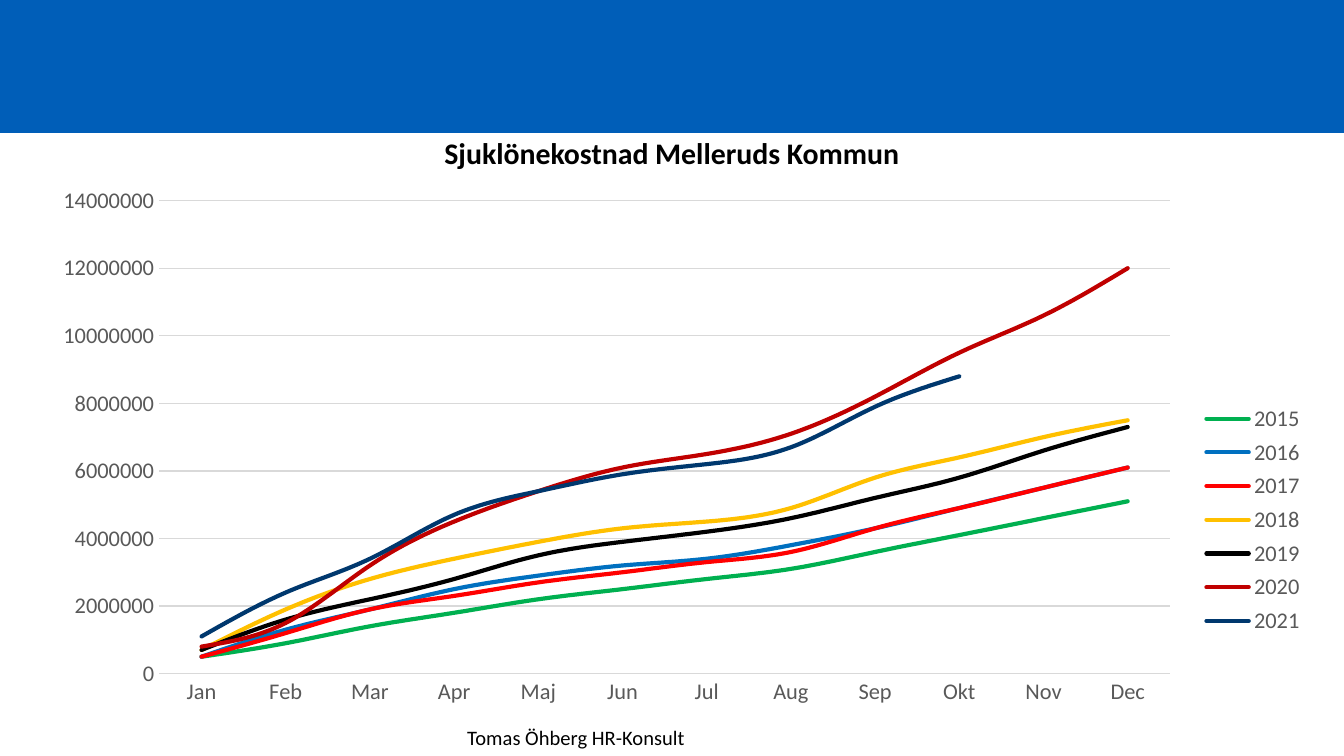
from pptx import Presentation
from pptx.chart.data import CategoryChartData
from pptx.dml.color import RGBColor
from pptx.enum.chart import XL_CHART_TYPE, XL_LEGEND_POSITION, XL_TICK_MARK
from pptx.enum.shapes import MSO_SHAPE
from pptx.enum.text import MSO_ANCHOR, PP_ALIGN
from pptx.oxml import parse_xml
from pptx.oxml.ns import nsdecls, qn
from pptx.util import Emu, Pt

EMU_PER_PX = 914400 / 134.4
FONT = "Calibri"
BLACK = RGBColor(0x00, 0x00, 0x00)
BAND_BLUE = RGBColor(0x00, 0x5E, 0xB8)
AXIS_GREY = RGBColor(0x59, 0x59, 0x59)
GRID_GREY = RGBColor(0xD9, 0xD9, 0xD9)
GREEN = RGBColor(0x00, 0xB0, 0x50)
BLUE = RGBColor(0x00, 0x70, 0xC0)
RED = RGBColor(0xFF, 0x00, 0x00)
YELLOW = RGBColor(0xFF, 0xC0, 0x00)
DARK_RED = RGBColor(0xC0, 0x00, 0x00)
NAVY = RGBColor(0x00, 0x38, 0x6E)

MONTHS = ["Jan", "Feb", "Mar", "Apr", "Maj", "Jun",
          "Jul", "Aug", "Sep", "Okt", "Nov", "Dec"]
HUNDRED_THOUSAND = 100000
COSTS = [
    ("2015", GREEN, [5, 9, 14, 18, 22, 25, 28, 31, 36, 41, 46, 51]),
    ("2016", BLUE, [5, 13, 19, 25, 29, 32, 34, 38, 43, 49, 55, 61]),
    ("2017", RED, [5, 12, 19, 23, 27, 30, 33, 36, 43, 49, 55, 61]),
    ("2018", YELLOW, [7, 19, 28, 34, 39, 43, 45, 49, 58, 64, 70, 75]),
    ("2019", BLACK, [7, 16, 22, 28, 35, 39, 42, 46, 52, 58, 66, 73]),
    ("2020", DARK_RED, [8, 15, 32, 45, 54, 61, 65, 71, 82, 95, 106, 120]),
    ("2021", NAVY, [11, 24, 34, 47, 54, 59, 62, 67, 79, 88, None, None]),
]


def px(*lengths):
    return [Emu(round(length * EMU_PER_PX)) for length in lengths]


def style_font(font, size, color, bold=False):
    font.name = FONT
    font.size = Pt(size)
    font.bold = bold
    font.color.rgb = color


def style_line(line, color, width):
    line.color.rgb = color
    line.width = Pt(width)


def add_band(page):
    band = page.shapes.add_shape(MSO_SHAPE.RECTANGLE, *px(0, 0, 1344, 133))
    band.shadow.inherit = False
    band.fill.solid()
    band.fill.fore_color.rgb = BAND_BLUE
    band.line.fill.background()


def write_text(box, text, size, align, bold=False):
    frame = box.text_frame
    frame.word_wrap = True
    frame.vertical_anchor = MSO_ANCHOR.TOP
    frame.text = text
    para = frame.paragraphs[0]
    para.alignment = align
    style_font(para.runs[0].font, size, BLACK, bold)


def place_title(page, text):
    title = page.shapes.title
    title.left, title.top, title.width, title.height = px(0, 128, 1344, 50)
    write_text(title, text, 16, PP_ALIGN.CENTER, bold=True)


def add_footer(page, text):
    box = page.shapes.add_textbox(*px(454, 718, 460, 39))
    write_text(box, text, 11, PP_ALIGN.LEFT)


def set_layout(element, index, target, x, y, w, h):
    for old in element.findall(qn("c:layout")):
        element.remove(old)
    inner = f'<c:layoutTarget val="{target}"/>' if target else ""
    element.insert(index, parse_xml(
        f'<c:layout {nsdecls("c")}><c:manualLayout>{inner}'
        '<c:xMode val="edge"/><c:yMode val="edge"/>'
        f'<c:x val="{x}"/><c:y val="{y}"/><c:w val="{w}"/><c:h val="{h}"/>'
        '</c:manualLayout></c:layout>'))


def style_axes(chart):
    for axis in (chart.category_axis, chart.value_axis):
        axis.major_tick_mark = XL_TICK_MARK.NONE
        axis.minor_tick_mark = XL_TICK_MARK.NONE
        style_font(axis.tick_labels.font, 12, AXIS_GREY)
    style_line(chart.category_axis.format.line, GRID_GREY, 0.75)
    values = chart.value_axis
    values.minimum_scale = 0
    values.maximum_scale = 14000000
    values.major_unit = 2000000
    values.format.line.fill.background()
    values.has_major_gridlines = True
    style_line(values.major_gridlines.format.line, GRID_GREY, 0.75)


def style_legend(chart):
    chart.has_legend = True
    legend = chart.legend
    legend.position = XL_LEGEND_POSITION.RIGHT
    legend.include_in_layout = False
    style_font(legend.font, 12, AXIS_GREY)


def add_cost_chart(page):
    data = CategoryChartData()
    data.categories = MONTHS
    for year, _, costs in COSTS:
        data.add_series(year, [None if cost is None else cost * HUNDRED_THOUSAND
                               for cost in costs])
    chart = page.shapes.add_chart(
        XL_CHART_TYPE.LINE, *px(38, 177, 1279, 540), data).chart
    chart.has_title = False
    style_font(chart.font, 10, BLACK)
    plot = chart.plots[0]
    plot.vary_by_categories = False
    for series, (_, color, _) in zip(plot.series, COSTS):
        series.smooth = True
        style_line(series.format.line, color, 2.25)
        for outline in series._element.iter(qn("a:ln")):
            outline.set("cap", "rnd")
    style_axes(chart)
    style_legend(chart)
    plot_area = chart._chartSpace.chart.plotArea
    set_layout(plot_area, 0, "inner", 0.095, 0.044, 0.79, 0.876)
    set_layout(chart.legend._element, 1, None, 0.91, 0.41, 0.08, 0.45)


def main():
    deck = Presentation()
    deck.slide_width, deck.slide_height = px(1344, 756)
    page = deck.slides.add_slide(deck.slide_layouts[5])
    add_band(page)
    add_footer(page, "Tomas Öhberg HR-Konsult")
    place_title(page, "Sjuklönekostnad Melleruds Kommun")
    add_cost_chart(page)
    deck.save("out.pptx")


if __name__ == "__main__":
    main()
